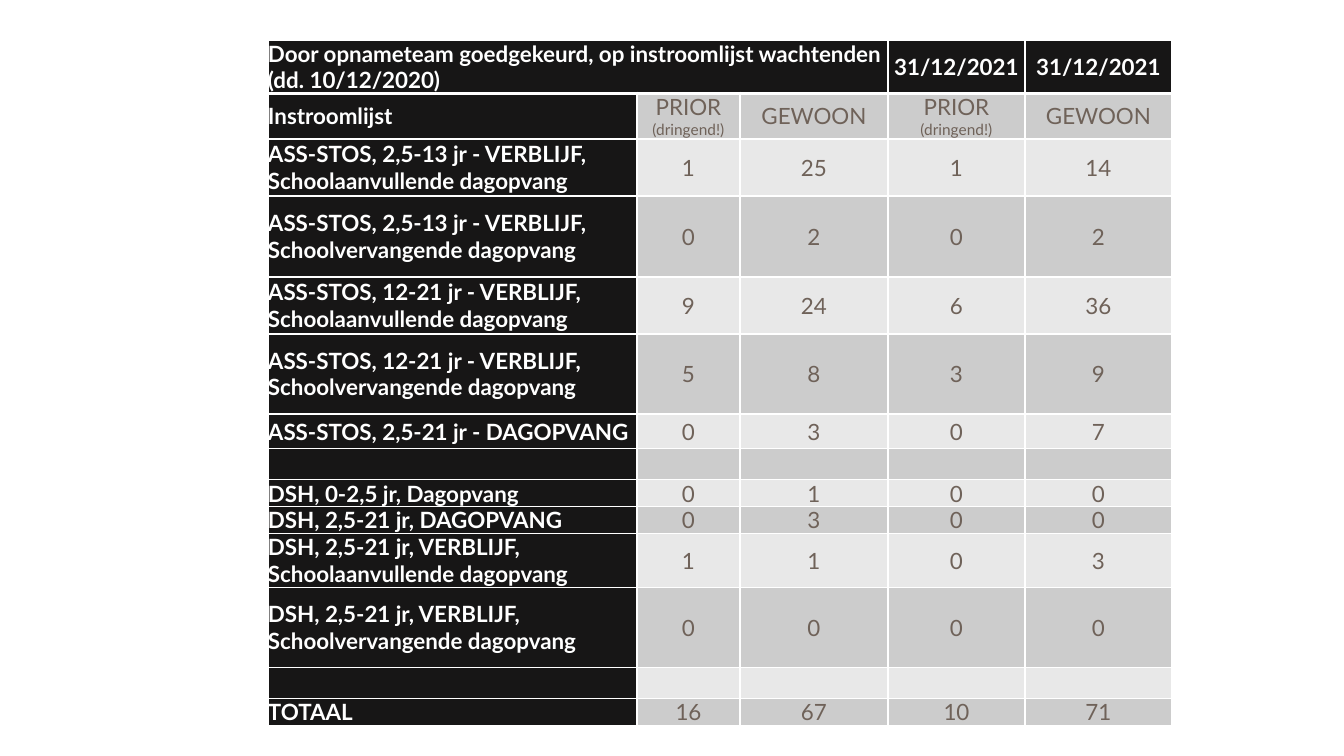
from lxml import etree
from pptx import Presentation
from pptx import util as u
from pptx.dml.color import RGBColor
from pptx.enum import text
from pptx.oxml import ns

PX = 914400 / 100.8
FONT = "Lato"
BLACK = RGBColor(0x17, 0x16, 0x16)
WHITE = RGBColor(0xFF, 0xFF, 0xFF)
BROWN = RGBColor(0x6F, 0x62, 0x59)
DARK_BAND = RGBColor(0xCC, 0xCC, 0xCC)
LIGHT_BAND = RGBColor(0xE8, 0xE8, 0xE8)

COLUMN_WIDTHS = [369, 103, 148, 137, 147]
ROW_HEIGHTS = [53, 45, 57, 81, 57, 80, 35, 31, 27, 26, 54, 80, 30, 27]
URGENT = ("PRIOR ", "(dringend!)")
ROWS = [
    ["Door opnameteam goedgekeurd, op instroomlijst wachtenden (dd. 10/12/2020)",
     "", "", "31/12/2021", "31/12/2021"],
    ["Instroomlijst", URGENT, "GEWOON", URGENT, "GEWOON"],
    ["ASS-STOS, 2,5-13 jr - VERBLIJF, Schoolaanvullende dagopvang", 1, 25, 1, 14],
    ["ASS-STOS, 2,5-13 jr - VERBLIJF, Schoolvervangende dagopvang", 0, 2, 0, 2],
    ["ASS-STOS, 12-21 jr - VERBLIJF, Schoolaanvullende dagopvang", 9, 24, 6, 36],
    ["ASS-STOS, 12-21 jr - VERBLIJF, Schoolvervangende dagopvang", 5, 8, 3, 9],
    ["ASS-STOS, 2,5-21 jr - DAGOPVANG", 0, 3, 0, 7],
    [""] * 5,
    ["DSH, 0-2,5 jr, Dagopvang", 0, 1, 0, 0],
    ["DSH, 2,5-21 jr, DAGOPVANG", 0, 3, 0, 0],
    ["DSH, 2,5-21 jr, VERBLIJF, Schoolaanvullende dagopvang", 1, 1, 0, 3],
    ["DSH, 2,5-21 jr, VERBLIJF, Schoolvervangende dagopvang", 0, 0, 0, 0],
    [""] * 5,
    ["TOTAAL", 16, 67, 10, 71],
]


def px(length):
    """Turn pixels into EMU."""
    return u.Emu(round(length * PX))


def add_borders(cell, top, bottom):
    """Draw white lines round a cell, with the top and bottom widths in points."""
    properties = cell._tc.get_or_add_tcPr()
    for side, width in (("L", 1), ("R", 1), ("T", top), ("B", bottom)):
        line = etree.SubElement(properties, ns.qn(f"a:ln{side}"), w=str(u.Pt(width)))
        fill = etree.SubElement(line, ns.qn("a:solidFill"))
        etree.SubElement(fill, ns.qn("a:srgbClr"), val=str(WHITE))


def write_cell(cell, content, color, bold, centred):
    """Write a cell's text; a pair is a word with a smaller note."""
    para = cell.text_frame.paragraphs[0]
    para.alignment = text.PP_ALIGN.CENTER if centred else text.PP_ALIGN.LEFT
    para.font.name = FONT
    para.font.bold = bold
    para.font.color.rgb = color
    if isinstance(content, tuple):
        for part, size in zip(content, (16, 11)):
            span = para.add_run()
            span.text = part
            span.font.size = u.Pt(size)
    else:
        para.font.size = u.Pt(16)
        para.add_run().text = str(content)


def style_cell(cell, row, column):
    """Set a cell's margins, borders and fill, and return whether it is a heading."""
    heading = row == 0 or column == 0
    cell.margin_left = cell.margin_right = cell.margin_top = cell.margin_bottom = 0
    cell.vertical_anchor = text.MSO_ANCHOR.MIDDLE
    add_borders(cell, 3 if row == 1 else 1, 3 if row == 0 else 1)
    cell.fill.solid()
    band = DARK_BAND if row % 2 else LIGHT_BAND
    cell.fill.fore_color.rgb = BLACK if heading else band
    return heading


def add_waiting_list(page, left, top):
    """Add the table of waiting numbers."""
    frame = page.shapes.add_table(
        len(ROWS), len(COLUMN_WIDTHS), px(left), px(top),
        px(sum(COLUMN_WIDTHS)), px(sum(ROW_HEIGHTS)))
    table = frame.table
    table.first_row = table.horz_banding = False
    for column, width in zip(table.columns, COLUMN_WIDTHS):
        column.width = px(width)
    for row, height in zip(table.rows, ROW_HEIGHTS):
        row.height = px(height)
    for row, contents in enumerate(ROWS):
        for column, content in enumerate(contents):
            cell = table.cell(row, column)
            heading = style_cell(cell, row, column)
            if content != "":
                write_cell(cell, content, WHITE if heading else BROWN, heading, column > 0)
    table.cell(0, 0).merge(table.cell(0, 2))


def main():
    """Build the slide and save it."""
    deck = Presentation()
    deck.slide_width, deck.slide_height = px(1344), px(756)
    page = deck.slides.add_slide(deck.slide_layouts[6])
    add_waiting_list(page, 268, 40)
    deck.save("out.pptx")


if __name__ == "__main__":
    main()
